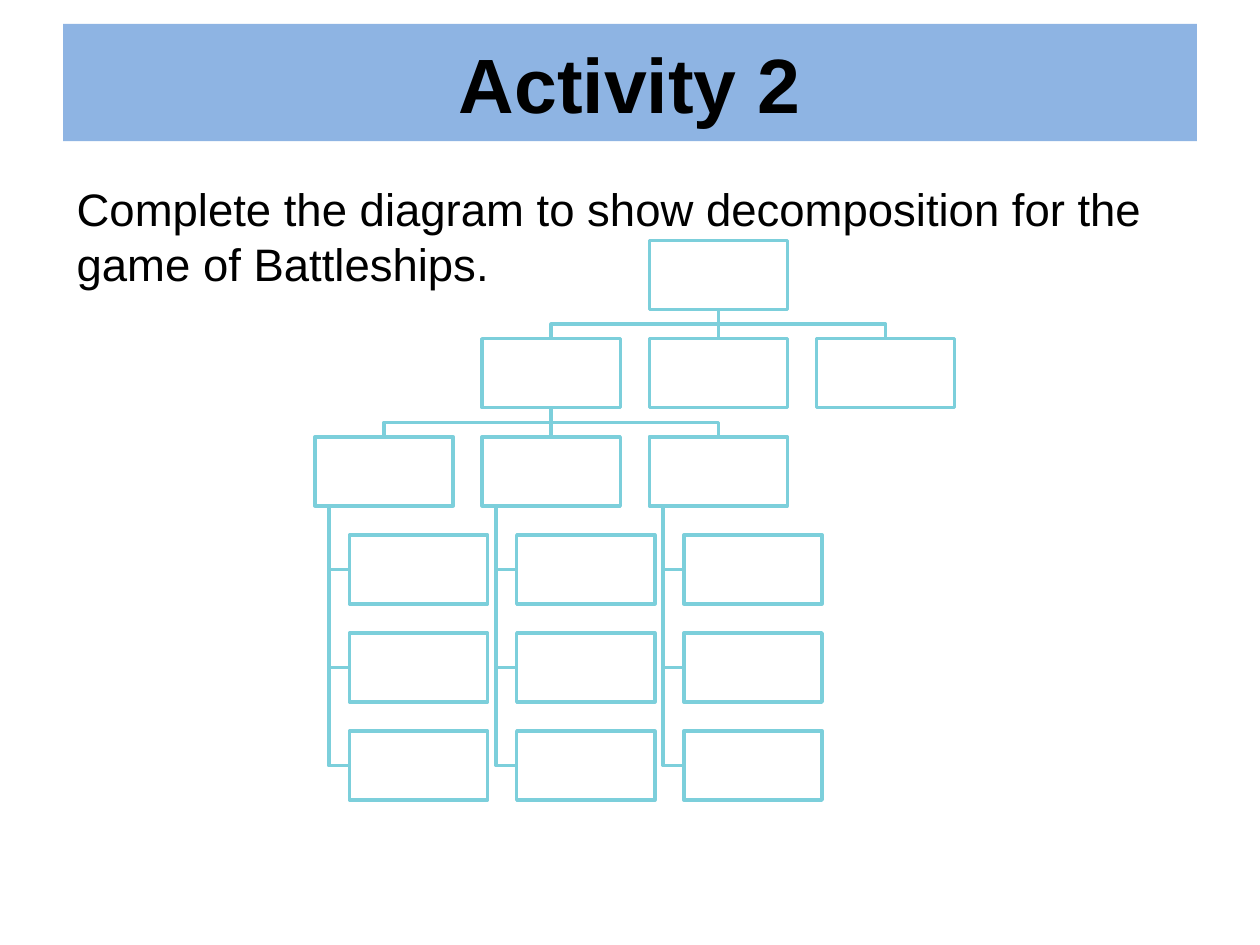
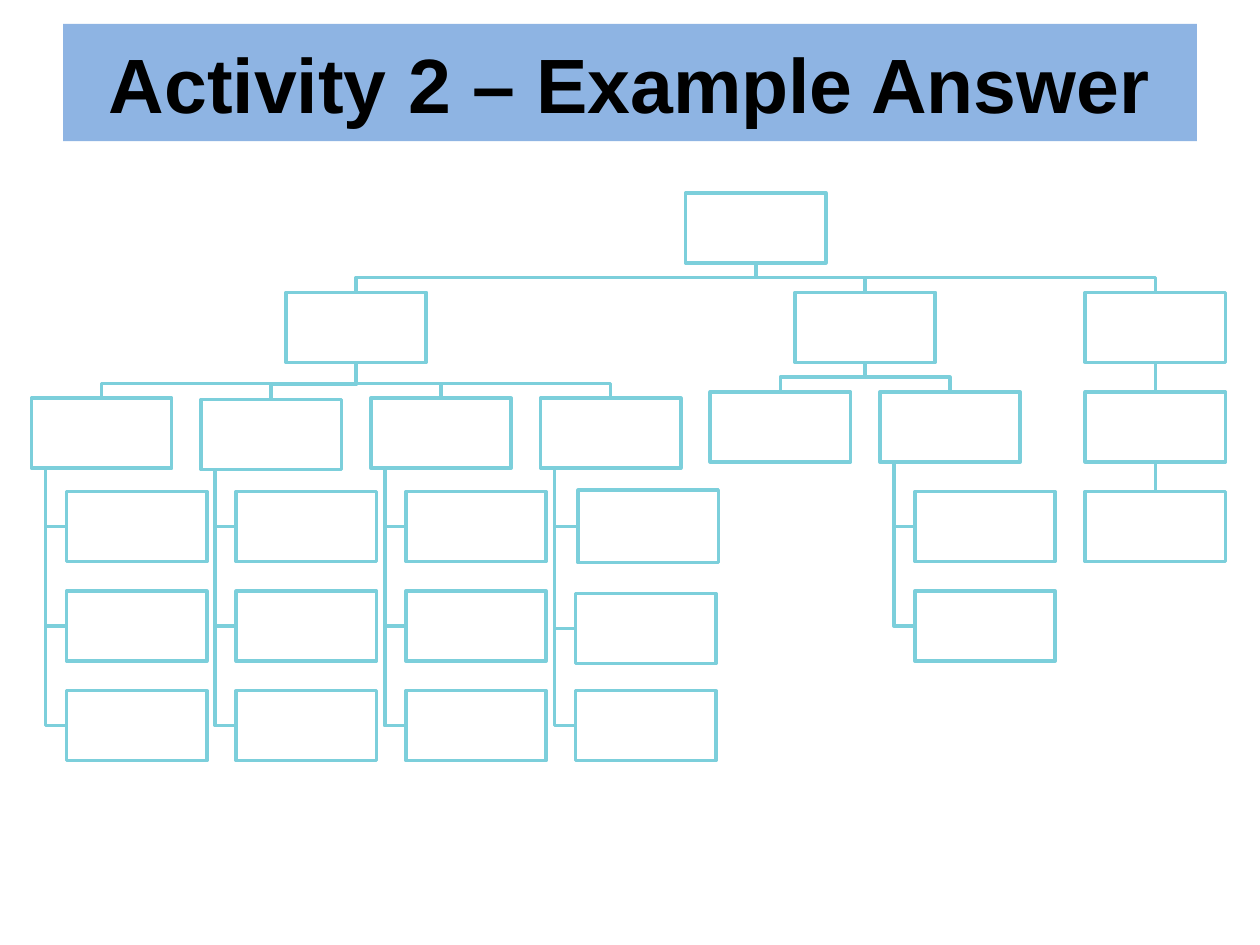
"""Build two activity slides with decomposition trees laid out by rule."""
from dataclasses import dataclass, field
from typing import Any, Iterator

from lxml import etree
from pptx import Presentation
from pptx import util as u
from pptx.dml.color import RGBColor
from pptx.enum import shapes, text
from pptx.oxml.ns import qn

BAND, WHITE, BLACK, TEAL = "8EB4E3", "FFFFFF", "000000", "7CCFDB"
GAP, INDENT, SPINE = 0.21, 0.25, 0.1
FONT = {"name": "Arial", "size": u.Pt(26), "bold": False}
TITLE_FONT = FONT | {"size": u.Pt(44), "bold": True}


@dataclass
class Box:
    children: list["Box"] = field(default_factory=list)
    col: float = 0
    hang: bool = False
    dx: float = 0
    dy: float = 0
    grow: float = 0
    x: float = 0
    y: float = 0
    h: float = 0


@dataclass
class Tree:
    root: Box
    left: float
    top: float
    span: float

    @property
    def width(self) -> float:
        return self.span / 3 / (1 + GAP)


def rgb(hex_colour: str) -> RGBColor:
    return RGBColor.from_string(hex_colour)


def apply(target: Any, values: dict[str, Any]) -> None:
    for name, value in values.items():
        setattr(target, name, value)


def write(sp: Any, words: str, font: dict[str, Any], align: Any, anchor: Any) -> None:
    tf = sp.text_frame
    apply(tf, {"word_wrap": True, "vertical_anchor": anchor})
    p = tf.paragraphs[0]
    p.alignment = align
    r = p.add_run()
    r.text = words
    apply(r.font, font)
    r.font.color.rgb = rgb(BLACK)


def add_title(s: Any, words: str) -> None:
    sp = s.shapes.title
    apply(sp, {"left": u.Inches(0.5), "top": u.Inches(0.19),
               "width": u.Inches(9), "height": u.Inches(0.93)})
    sp.fill.solid()
    sp.fill.fore_color.rgb = rgb(BAND)
    write(sp, words, TITLE_FONT, text.PP_ALIGN.CENTER, text.MSO_ANCHOR.MIDDLE)


def outline(sp: Any) -> None:
    sp.line.color.rgb = rgb(TEAL)
    sp.line.width = u.Pt(2)


def place(tree: Tree, box: Box, row: int = 0, x: float | None = None) -> None:
    """Put leaves in columns, hung boxes under their parent and parents midway."""
    w = tree.width
    spread = [] if box.hang else box.children
    for child in spread:
        place(tree, child, row + 1)
    if x is not None:
        box.x = x
    elif spread:
        box.x = (spread[0].x + spread[-1].x) / 2
    else:
        box.x = tree.left + box.col * w * (1 + GAP)
    box.y = tree.top + row * w * (0.5 + GAP) + box.dy
    box.h = w / 2 + box.grow
    if box.hang:
        for i, child in enumerate(box.children, 1):
            place(tree, child, row + i, box.x + w * INDENT + child.dx)


def walk(box: Box) -> Iterator[Box]:
    yield box
    for child in box.children:
        yield from walk(child)


def route(parent: Box, child: Box, w: float) -> list[tuple[float, float]]:
    bottom = parent.y + parent.h
    if parent.hang:
        x, y = parent.x + w * SPINE, child.y + child.h / 2
        return [(x, bottom), (x, y), (child.x, y)]
    start, end = parent.x + w / 2, child.x + w / 2
    if abs(start - end) < 0.01:
        return [(start, bottom), (start, child.y)]
    bus = child.y - w * GAP / 2
    return [(start, bottom), (start, bus), (end, bus), (end, child.y)]


def add_link(group: Any, points: list[tuple[float, float]]) -> None:
    pts = [(u.Inches(x), u.Inches(y)) for x, y in points]
    if len(pts) == 2:
        sp = group.add_connector(shapes.MSO_CONNECTOR.STRAIGHT, *pts[0], *pts[1])
        outline(sp)
        etree.SubElement(sp.element.spPr, qn("a:effectLst"))
        return
    path_builder = group.build_freeform(*pts[0])
    path_builder.add_line_segments(pts[1:], close=False)
    sp = path_builder.convert_to_shape()
    sp.fill.background()
    outline(sp)
    sp.shadow.inherit = False


def add_box(group: Any, box: Box, w: float) -> None:
    lengths = [u.Inches(v) for v in (box.x, box.y, w, box.h)]
    sp = group.add_shape(shapes.MSO_SHAPE.RECTANGLE, *lengths)
    sp.fill.solid()
    sp.fill.fore_color.rgb = rgb(WHITE)
    outline(sp)
    sp.shadow.inherit = False


def add_tree(s: Any, tree: Tree) -> None:
    place(tree, tree.root)
    group = s.shapes.add_group_shape().shapes
    boxes = list(walk(tree.root))
    for parent in boxes:
        for child in parent.children:
            add_link(group, route(parent, child, tree.width))
    for box in boxes:
        add_box(group, box, tree.width)


def hanging(col: float, count: int = 3, dy: float = 0) -> Box:
    return Box([Box() for _ in range(count)], col, hang=True, dy=dy)


def blank_tree() -> Tree:
    detailed = Box([hanging(col) for col in range(3)])
    return Tree(Box([detailed, Box(col=2), Box(col=3)]), 2.5, 1.91, 3.98)


def answer_tree() -> Tree:
    nudged = [Box(dx=0.02, dy=-0.01, grow=0.02), Box(dy=0.02), Box()]
    wide = Box([hanging(0, dy=0.05), hanging(1, dy=0.06), hanging(2, dy=0.05),
                Box(nudged, 3, hang=True, dy=0.05)])
    pair = Box([Box(col=4), hanging(5, 2)])
    chain = Box([Box([Box(col=6.21)])])
    return Tree(Box([wide, pair, chain]), 0.25, 1.53, 4.04)


def main() -> None:
    prs = Presentation()
    prs.slide_width, prs.slide_height = u.Inches(10), u.Inches(7.5)
    layout = prs.slide_layouts.get_by_name("Title Only")

    s = prs.slides.add_slide(layout)
    add_title(s, "Activity 2")
    sp = s.shapes.add_textbox(u.Inches(0.51), u.Inches(1.39), u.Inches(8.98), u.Inches(0.98))
    write(sp, "Complete the diagram to show decomposition for the game of Battleships.",
          FONT, text.PP_ALIGN.LEFT, text.MSO_ANCHOR.TOP)
    add_tree(s, blank_tree())

    s = prs.slides.add_slide(layout)
    add_title(s, "Activity 2 – Example Answer")
    add_tree(s, answer_tree())
    prs.save("out.pptx")


if __name__ == "__main__":
    main()
